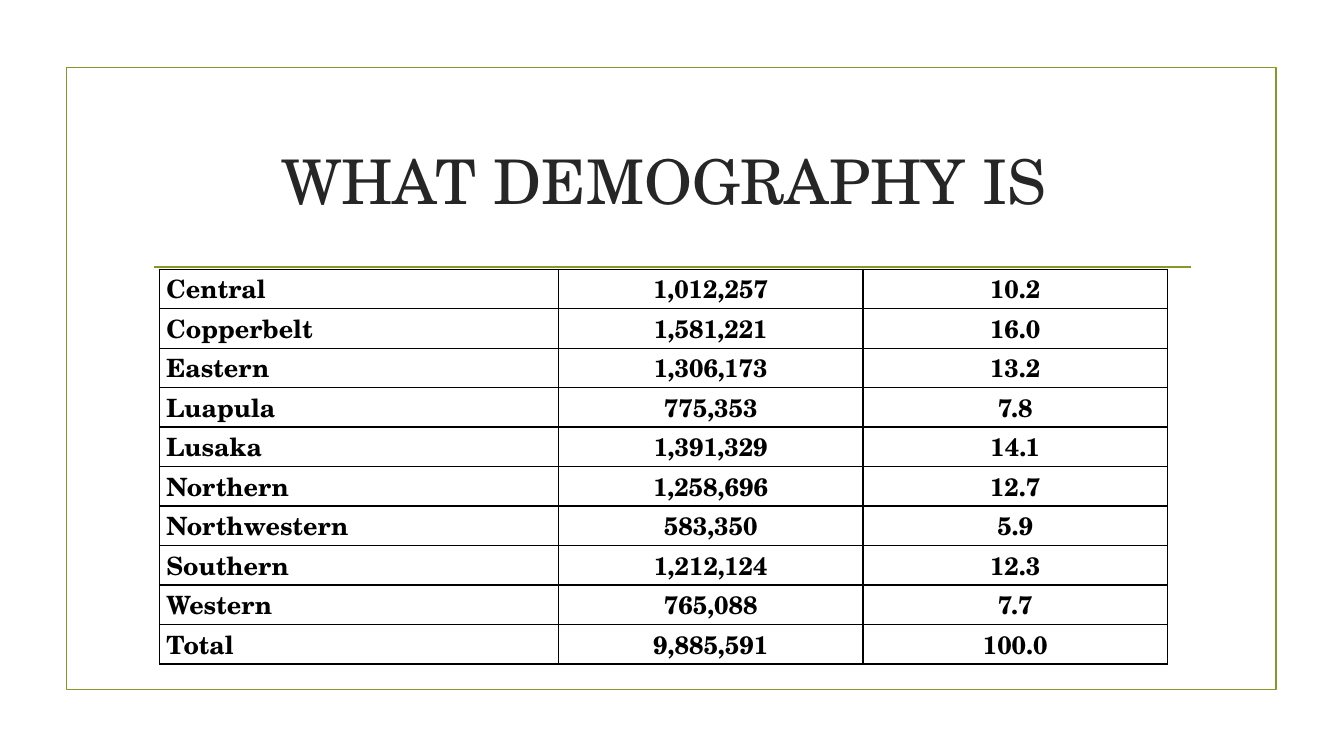
from dataclasses import dataclass

from lxml.etree import SubElement
from pptx import Presentation
from pptx.dml.color import RGBColor
from pptx.enum.shapes import MSO_CONNECTOR, MSO_SHAPE
from pptx.enum.text import MSO_ANCHOR, PP_ALIGN
from pptx.oxml.ns import qn
from pptx.util import Emu, Pt

EMU_PER_PX = 9144
FONT = "TeX Gyre Schola"
COLOURS = {"olive": "83992A", "title": "262626", "black": "000000"}


@dataclass(frozen=True)
class Province:
    name: str
    population: str
    percent: str


PROVINCES = [
    Province("Central", "1,012,257", "10.2"),
    Province("Copperbelt", "1,581,221", "16.0"),
    Province("Eastern", "1,306,173", "13.2"),
    Province("Luapula", "775,353", "7.8"),
    Province("Lusaka", "1,391,329", "14.1"),
    Province("Northern", "1,258,696", "12.7"),
    Province("Northwestern", "583,350", "5.9"),
    Province("Southern", "1,212,124", "12.3"),
    Province("Western", "765,088", "7.7"),
    Province("Total", "9,885,591", "100.0"),
]
COLUMN_WIDTHS = [396, 302, 302]
TABLE_HEIGHT = 392


def px(length: int) -> Emu:
    return Emu(length * EMU_PER_PX)


def colour(name: str) -> RGBColor:
    return RGBColor.from_string(COLOURS[name])


def style_font(para, size: int, colour_name: str, bold: bool = False) -> None:
    para.font.name = FONT
    para.font.size = Pt(size)
    para.font.bold = bold
    para.font.color.rgb = colour(colour_name)


def style_line(shape) -> None:
    shape.line.color.rgb = colour("olive")
    shape.line.width = Pt(1.25)


def draw_frame(page) -> None:
    frame = page.shapes.add_shape(MSO_SHAPE.RECTANGLE, px(66), px(67), px(1200), px(617))
    frame.shadow.inherit = False
    frame.fill.background()
    style_line(frame)


def draw_rule(page) -> None:
    rule = page.shapes.add_connector(MSO_CONNECTOR.STRAIGHT, px(153), px(265), px(1181), px(265))
    style_line(rule)
    SubElement(rule._element.spPr, qn("a:effectLst"))


def draw_title(page) -> None:
    title = page.shapes.title
    title.left, title.top, title.width, title.height = px(142), px(107), px(1050), px(143)
    title.text_frame.text = "WHAT DEMOGRAPHY IS "
    title.text_frame.vertical_anchor = MSO_ANCHOR.MIDDLE
    para = title.text_frame.paragraphs[0]
    para.alignment = PP_ALIGN.CENTER
    style_font(para, 44, "title")


def add_borders(cell) -> None:
    properties = cell._tc.get_or_add_tcPr()
    for side in ("lnL", "lnR", "lnT", "lnB"):
        border = SubElement(properties, qn(f"a:{side}"), w=str(Pt(1)))
        fill = SubElement(border, qn("a:solidFill"))
        SubElement(fill, qn("a:srgbClr"), val=COLOURS["black"])


def fill_cell(cell, text: str, alignment: PP_ALIGN) -> None:
    cell.margin_left = cell.margin_right = px(7)
    cell.margin_top = cell.margin_bottom = 0
    add_borders(cell)
    cell.fill.background()
    cell.text = text
    para = cell.text_frame.paragraphs[0]
    para.alignment = alignment
    style_font(para, 18, "black", bold=True)


def draw_table(page) -> None:
    table = page.shapes.add_table(
        len(PROVINCES), len(COLUMN_WIDTHS),
        px(158), px(267), px(sum(COLUMN_WIDTHS)), px(TABLE_HEIGHT),
    ).table
    table.first_row = False
    table.horz_banding = False
    for column, width in zip(table.columns, COLUMN_WIDTHS):
        column.width = px(width)
    for row, province in zip(table.rows, PROVINCES):
        row.height = Emu(px(TABLE_HEIGHT) // len(PROVINCES))
        name, population, percent = row.cells
        fill_cell(name, province.name, PP_ALIGN.LEFT)
        fill_cell(population, province.population, PP_ALIGN.CENTER)
        fill_cell(percent, province.percent, PP_ALIGN.CENTER)


def main() -> None:
    deck = Presentation()
    deck.slide_width, deck.slide_height = px(1333), px(750)
    page = deck.slides.add_slide(deck.slide_layouts.get_by_name("Title Only"))
    draw_frame(page)
    draw_rule(page)
    draw_title(page)
    draw_table(page)
    deck.save("out.pptx")


if __name__ == "__main__":
    main()
